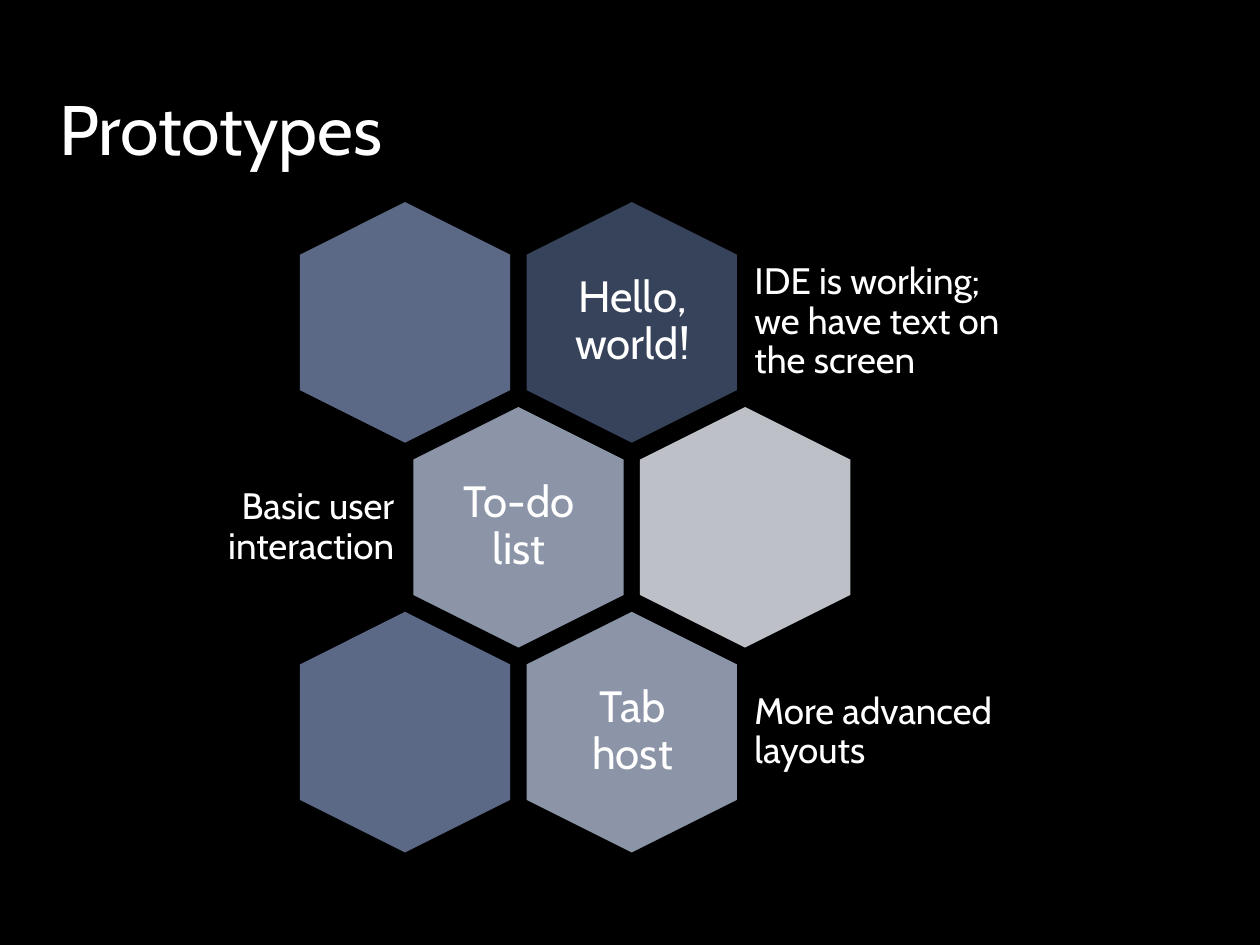
from pptx import Presentation
from pptx.dml.color import RGBColor
from pptx.enum.shapes import MSO_SHAPE
from pptx.enum.text import MSO_ANCHOR, PP_ALIGN
from pptx.util import Cm, Pt

HEXAGON = MSO_SHAPE.HEXAGON
MIDDLE, BOTTOM = MSO_ANCHOR.MIDDLE, MSO_ANCHOR.BOTTOM
LEFT, CENTER, RIGHT = PP_ALIGN.LEFT, PP_ALIGN.CENTER, PP_ALIGN.RIGHT

BLACK = RGBColor(0x00, 0x00, 0x00)
WHITE = RGBColor(0xFF, 0xFF, 0xFF)
NAVY = RGBColor(0x37, 0x43, 0x5A)
SLATE = RGBColor(0x5C, 0x69, 0x86)
STEEL = RGBColor(0x8C, 0x94, 0xA7)
SILVER = RGBColor(0xBD, 0xC0, 0xC6)

FONT = "Cabin"
HEXAGON_WIDTH, HEXAGON_HEIGHT = Cm(4.85), Cm(4.24)
COLUMN_STEP, ROW_STEP = Cm(4.57), Cm(4.13)

CELLS = [
    (0, 1, NAVY, "Hello, world!", "IDE is working; we have text on the screen"),
    (0, 0, SLATE, None, None),
    (1, 0, STEEL, "To-do list", "Basic user interaction"),
    (1, 1, SILVER, None, None),
    (2, 1, STEEL, "Tab host", "More advanced layouts"),
    (2, 0, SLATE, None, None),
]


def add_text(slide, box, text, size, alignment, anchor, inset, spacing=None):
    shape = slide.shapes.add_textbox(*box)
    frame = shape.text_frame
    frame.word_wrap = True
    frame.vertical_anchor = anchor
    frame.margin_left = frame.margin_right = inset
    frame.margin_top = frame.margin_bottom = inset
    paragraph = frame.paragraphs[0]
    paragraph.alignment = alignment
    if spacing:
        paragraph.line_spacing = spacing
    run = paragraph.add_run()
    run.text = text
    run.font.name = FONT
    run.font.size = Pt(size)
    run.font.color.rgb = WHITE


def add_title(slide, box):
    add_text(slide, box, "Prototypes", 40, LEFT, BOTTOM, Cm(0.2))


def add_cell(slide, left, top, color, label, caption, caption_on_left):
    shape = slide.shapes.add_shape(HEXAGON, left, top, HEXAGON_WIDTH, HEXAGON_HEIGHT)
    shape.rotation = 90
    shape.adjustments[0] = 0.25
    shape.shadow.inherit = False
    shape.fill.solid()
    shape.fill.fore_color.rgb = color
    shape.line.fill.background()
    if label is None:
        return
    label_box = (left + Cm(0.98), top + Cm(0.44), Cm(2.92), Cm(3.35))
    add_text(slide, label_box, label, 25, CENTER, MIDDLE, Cm(0.25), 0.9)
    if caption_on_left:
        offset, width, alignment = Cm(-5.11), Cm(5.26), RIGHT
    else:
        offset, width, alignment = Cm(4.67), Cm(5.44), LEFT
    caption_box = (left + offset, top + Cm(0.66), width, Cm(2.92))
    add_text(slide, caption_box, caption, 21, alignment, MIDDLE, Cm(0.23), 0.9)


def add_honeycomb(slide, left, top):
    for row, column, color, label, caption in CELLS:
        shift = COLUMN_STEP // 2 if row % 2 else 0
        cell_left = left + column * COLUMN_STEP + shift
        cell_top = top + row * ROW_STEP
        add_cell(slide, cell_left, cell_top, color, label, caption, column == 0)


def main():
    presentation = Presentation()
    presentation.slide_width, presentation.slide_height = Cm(25.4), Cm(19.05)
    slide = presentation.slides.add_slide(presentation.slide_layouts[6])
    slide.background.fill.solid()
    slide.background.fill.fore_color.rgb = BLACK
    add_honeycomb(slide, Cm(5.74), Cm(4.38))
    add_title(slide, (Cm(1), Cm(0.64), Cm(21.34), Cm(2.97)))
    presentation.save("out.pptx")


if __name__ == "__main__":
    main()
